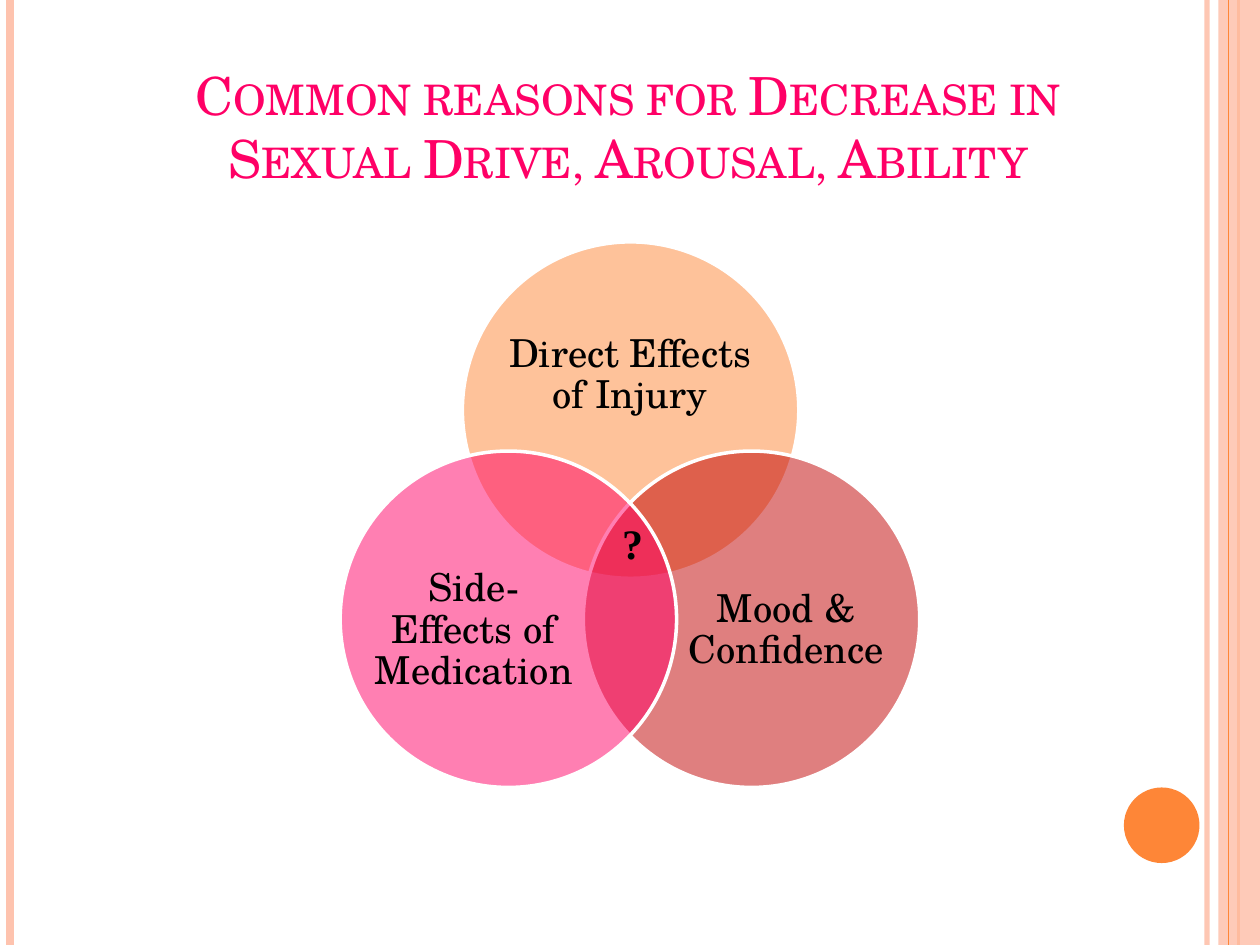
"""Build a slide with a three-circle Venn diagram of reasons for decreased drive."""
from lxml import etree
from pptx import Presentation, util as u
from pptx.dml.color import RGBColor
from pptx.enum import shapes as sh, text as tx
from pptx.oxml.ns import qn

HUES = {"rose": "FF0066", "peach": "FEC3AE", "orange": "FE8637",
        "red": "C00000", "white": "FFFFFF", "black": "000000"}
FACE = "TeX Gyre Schola"
WIDE, HIGH = 10, 7.5
TITLE = "Common reasons for Decrease in Sexual Drive, Arousal, Ability"
RULES = [(9.58, "peach", 3, 93), (0.08, "peach", 4.5, 100),
         (9.83, "orange", 1.5, 100), (9.75, "orange", 0.75, 100)]
BAND = (9.67, 0, 0.33, HIGH)
DOT = (8.92, 6.25, 0.6, 0.6)
SIZE = 2.67
RINGS = [("Direct Effects of Injury", "orange", (3.67, 1.92), (0.35, 0.46, 1.96, 1.2)),
         ("Mood & Confidence", "red", (4.63, 3.58), (0.81, 0.69, 1.6, 1.47)),
         ("Side-Effects of Medication", "rose", (2.7, 3.58), (0.26, 0.69, 1.6, 1.47))]
MARK = ("?", (4.84, 4.06, 0.47, 0.51))


def inch(box):
    return [u.Inches(v) for v in box]


def tint(fill, hue, alpha=100):
    fill.solid()
    fill.fore_color.rgb = RGBColor.from_string(HUES[hue])
    if alpha < 100:
        for tag in fill._xPr.iter(qn("a:srgbClr")):
            etree.SubElement(tag, qn("a:alpha"), val=str(alpha * 1000))


def style(para, size, hue, face=FACE, bold=False):
    font = para.font
    font.size, font.name, font.bold = u.Pt(size), face, bold
    font.color.rgb = RGBColor.from_string(HUES[hue])


def add_form(slide, kind, box, hue, alpha=100, edge=None):
    form = slide.shapes.add_shape(kind, *inch(box))
    form.shadow.inherit = False
    tint(form.fill, hue, alpha)
    if edge:
        tint(form.line.fill, "white")
        form.line.width = u.Pt(edge)
    else:
        form.line.fill.background()


def add_rule(slide, x, hue, width, alpha):
    rule = slide.shapes.add_connector(sh.MSO_CONNECTOR.STRAIGHT, *inch((x, 0, x, HIGH)))
    tint(rule.line.fill, hue, alpha)
    rule.line.width = u.Pt(width)
    etree.SubElement(rule._element.spPr, qn("a:effectLst"))


def add_label(slide, words, box):
    frame = slide.shapes.add_textbox(*inch(box)).text_frame
    frame.word_wrap = True
    frame.text = words
    return frame, frame.paragraphs[0]


def add_ring(slide, words, hue, spot, inset):
    add_form(slide, sh.MSO_SHAPE.OVAL, (*spot, SIZE, SIZE), hue, 50, 2)
    left, top, wide, high = inset
    frame, para = add_label(slide, words, (spot[0] + left, spot[1] + top, wide, high))
    frame.margin_left = frame.margin_right = frame.margin_top = frame.margin_bottom = 0
    frame.vertical_anchor = tx.MSO_ANCHOR.MIDDLE
    para.alignment = tx.PP_ALIGN.CENTER
    para.line_spacing = 0.9
    style(para, 22, "black")


def set_title(slide):
    head = slide.shapes.title
    head.left, head.top, head.width, head.height = inch((0.9, 0.3, 8.17, 1.25))
    frame = head.text_frame
    frame.text = TITLE
    frame.auto_size = tx.MSO_AUTO_SIZE.NONE
    frame.vertical_anchor = tx.MSO_ANCHOR.BOTTOM
    para = frame.paragraphs[0]
    para.alignment = tx.PP_ALIGN.CENTER
    style(para, 30, "rose")
    para.runs[0]._r.get_or_add_rPr().set("cap", "small")


def main():
    deck = Presentation()
    deck.slide_width, deck.slide_height = inch((WIDE, HIGH))
    slide = deck.slides.add_slide(deck.slide_layouts[5])
    set_title(slide)
    for rule in RULES[:3]:
        add_rule(slide, *rule)
    add_form(slide, sh.MSO_SHAPE.RECTANGLE, BAND, "peach", 87)
    add_rule(slide, *RULES[3])
    add_form(slide, sh.MSO_SHAPE.OVAL, DOT, "orange")
    for ring in RINGS:
        add_ring(slide, *ring)
    para = add_label(slide, *MARK)[1]
    style(para, 24, "black", "Times New Roman", True)
    deck.save("out.pptx")


if __name__ == "__main__":
    main()
